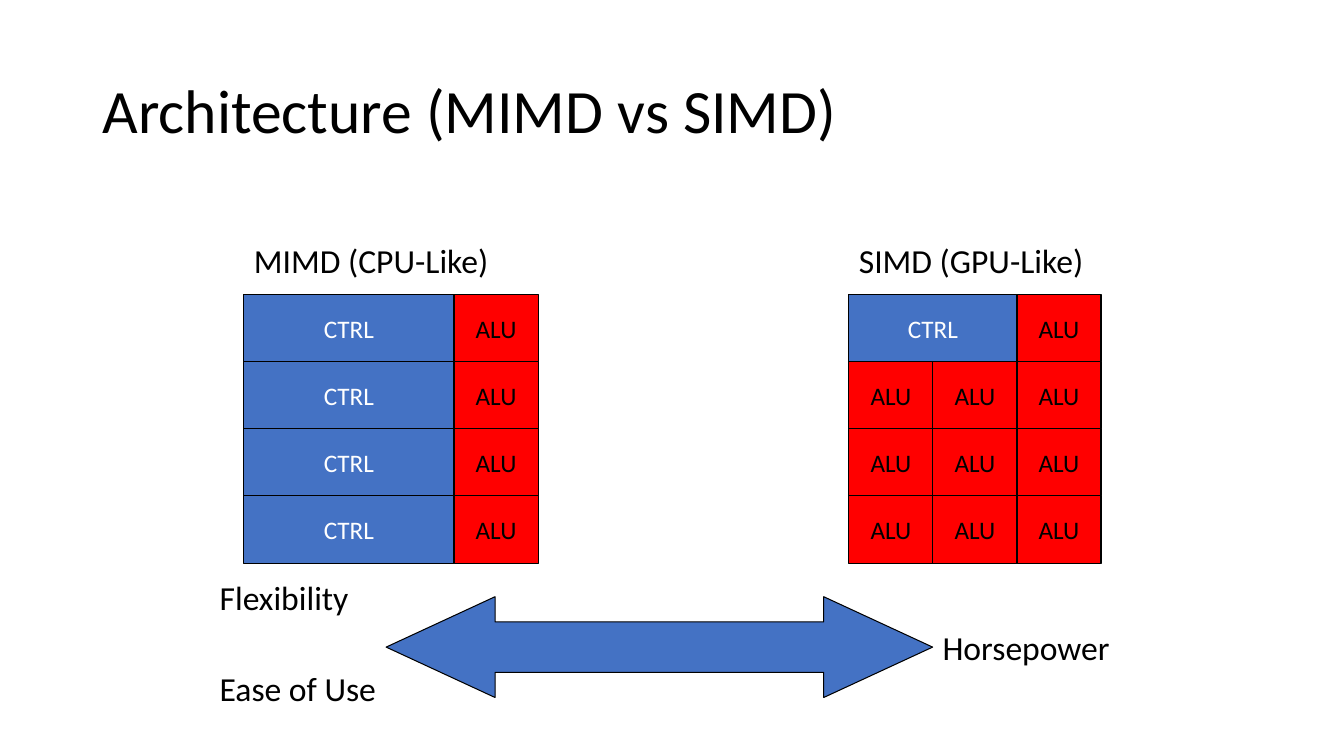
from pptx import Presentation, util as u
from pptx.dml.color import RGBColor
from pptx.enum import shapes, text

# Content
COLORS = {"blue": "4472C4", "red": "FF0000", "black": "000000", "white": "FFFFFF"}
FONT = "Calibri"
TITLE = ("Architecture (MIMD vs SIMD)", 0.92, 0.4, 11.5, 1.45)
LABELS = [  # text, left, top, width
    ("MIMD (CPU-Like)", 2.42, 2.33, 2.92),
    ("SIMD (GPU-Like)", 8.42, 2.33, 2.5),
    ("Flexibility", 2.08, 5.67, 1.75),
    ("Horsepower", 9.25, 6.17, 2.25),
    ("Ease of Use", 2.08, 6.58, 2),
]
LABEL_H = 0.5
CELLS = {"CTRL": ("blue", "white"), "ALU": ("red", "black")}  # fill, text
GRIDS = [  # left, rows of (cell, width in ALU units)
    (2.42, [[("CTRL", 2.5), ("ALU", 1)]] * 4),
    (8.42, [[("CTRL", 2), ("ALU", 1)]] + [[("ALU", 1)] * 3] * 3),
]
GRID_TOP, ALU_W, ROW_H = 2.92, 5 / 6, 2 / 3
ARROW = (3.83, 5.92, 5.42, 1)

prs = Presentation()
prs.slide_width, prs.slide_height = u.Inches(13.33), u.Inches(7.5)
s = prs.slides.add_slide(prs.slide_layouts[6])


def rgb(name):
    return RGBColor.from_string(COLORS[name])


def write(tf, words, size, color="black"):
    p = tf.paragraphs[0]
    r = p.add_run()
    r.text = words
    r.font.name, r.font.size = FONT, u.Pt(size)
    r.font.color.rgb = rgb(color)
    return p


def add_text(words, size, *box):
    tf = s.shapes.add_textbox(*map(u.Inches, box)).text_frame
    tf.word_wrap = True
    return tf, write(tf, words, size)


def add_block(kind, fill, *box):
    sp = s.shapes.add_shape(kind, *map(u.Inches, box))
    sp.shadow.inherit = False
    sp.fill.solid()
    sp.fill.fore_color.rgb = rgb(fill)
    sp.line.color.rgb = rgb("black")
    sp.line.width = u.Pt(0.75)
    return sp


# Title
tf, p = add_text(TITLE[0], 44, *TITLE[1:])
tf.vertical_anchor = text.MSO_ANCHOR.MIDDLE
p.line_spacing = 0.9

# Processor grids
for left, rows in GRIDS:
    for i, row in enumerate(rows):
        x = left
        for name, units in row:
            fill, color = CELLS[name]
            sp = add_block(shapes.MSO_SHAPE.RECTANGLE, fill,
                           x, GRID_TOP + i * ROW_H, units * ALU_W, ROW_H)
            tf = sp.text_frame
            tf.word_wrap = False
            tf.vertical_anchor = text.MSO_ANCHOR.MIDDLE
            write(tf, name, 18, color).alignment = text.PP_ALIGN.CENTER
            x += units * ALU_W

# Trade-off arrow
arrow = add_block(shapes.MSO_SHAPE.LEFT_RIGHT_ARROW, "blue", *ARROW)
arrow.adjustments[0], arrow.adjustments[1] = 0.5, 1.08

# Labels
for words, left, top, width in LABELS:
    add_text(words, 24, left, top, width, LABEL_H)

prs.save("out.pptx")
